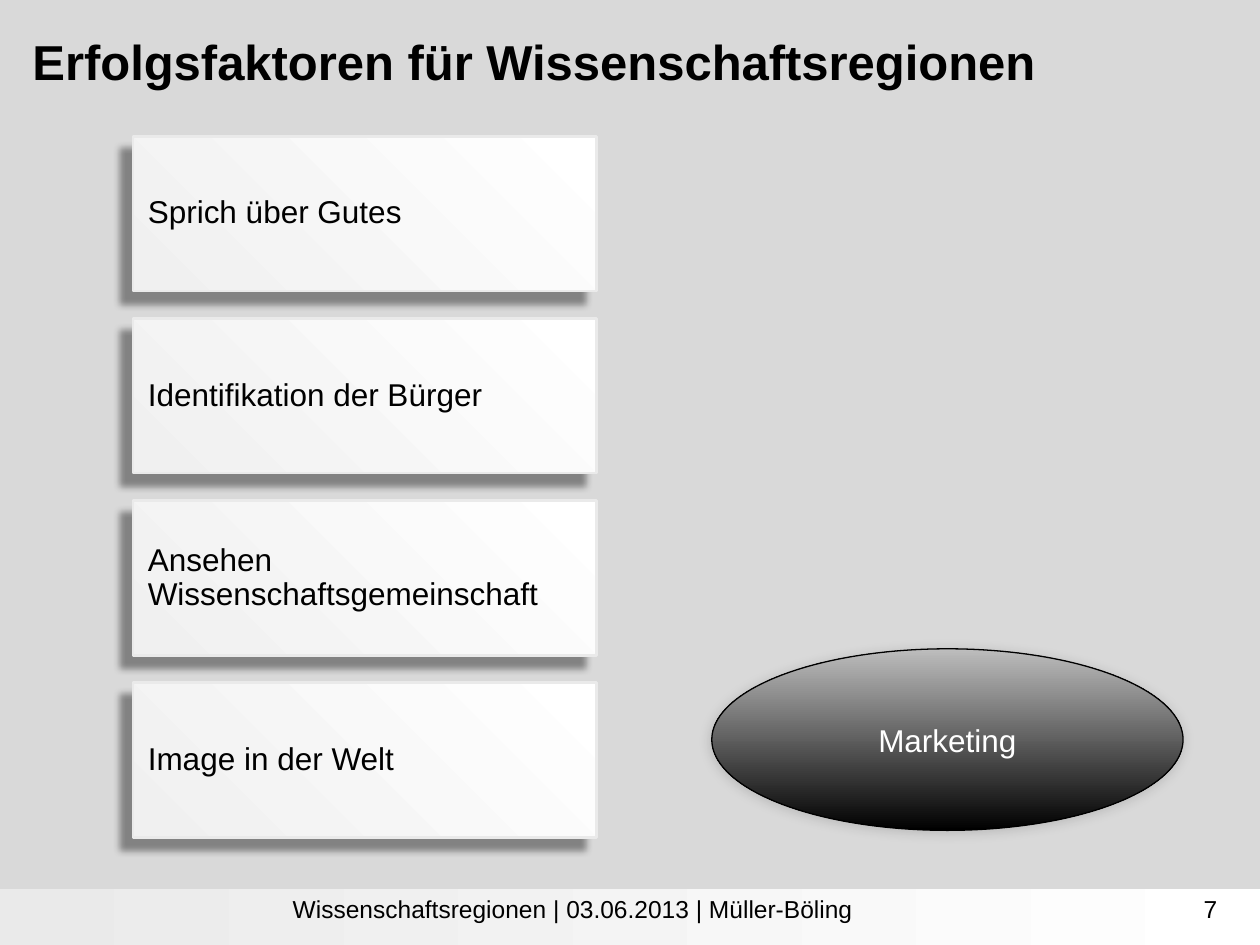
from dataclasses import dataclass

from lxml import etree
from pptx import Presentation
from pptx import util as u
from pptx.dml.color import RGBColor
from pptx.enum import shapes, text
from pptx.oxml.ns import qn


@dataclass(frozen=True)
class Theme:
    font: str = "Arial"
    title_size: int = 28
    body_size: int = 18
    footer_size: int = 14
    background: str = "D9D9D9"
    black: str = "000000"
    white: str = "FFFFFF"
    bar_grey: str = "EAEAEA"
    card_grey: str = "F0F0F0"
    ellipse_grey: str = "BDBDBD"


theme = Theme()


def write(shape, content, size, color, align, anchor, bold=False):
    frame = shape.text_frame
    frame.word_wrap = True
    frame.auto_size = text.MSO_AUTO_SIZE.NONE
    frame.vertical_anchor = anchor
    paragraph = frame.paragraphs[0]
    paragraph.alignment = align
    run = paragraph.add_run()
    run.text = content
    run.font.name = theme.font
    run.font.size = u.Pt(size)
    run.font.bold = bold
    run.font.color.rgb = RGBColor.from_string(color)
    return paragraph


def style(shape, start, end, angle, line=None, shadow=None):
    """Set a two-colour gradient, a (colour, width) line and an (opacity, blur, distance) shadow."""
    shape.fill.gradient()
    shape.fill.gradient_angle = angle
    for stop, color in zip(shape.fill.gradient_stops, (start, end)):
        stop.color.rgb = RGBColor.from_string(color)
    if line:
        shape.line.color.rgb = RGBColor.from_string(line[0])
        shape.line.width = u.Pt(line[1])
    else:
        shape.line.fill.background()
    shape.shadow.inherit = False
    if shadow:
        opacity, blur, distance = shadow
        effects = shape._element.spPr.find(qn("a:effectLst"))
        outer = etree.SubElement(effects, qn("a:outerShdw"), blurRad=str(u.Pt(blur)),
                                 dist=str(u.Pt(distance)), dir=str(135 * 60000),
                                 algn="ctr", rotWithShape="0")
        color = etree.SubElement(outer, qn("a:srgbClr"), val=theme.black)
        etree.SubElement(color, qn("a:alpha"), val=str(opacity * 1000))


presentation = Presentation()
presentation.slide_width = u.Cm(25.4)
presentation.slide_height = u.Cm(19.05)
slide = presentation.slides.add_slide(presentation.slide_layouts[5])
slide.background.fill.solid()
slide.background.fill.fore_color.rgb = RGBColor.from_string(theme.background)

# Footer
bar = slide.shapes.add_shape(shapes.MSO_SHAPE.RECTANGLE,
                             0, u.Cm(17.92), u.Cm(25.4), u.Cm(1.13))
style(bar, theme.white, theme.bar_grey, 180)

footers = [
    ("Wissenschaftsregionen | 03.06.2013 | Müller-Böling", 0.4, 22.3, text.PP_ALIGN.CENTER),
    ("7", 18.87, 5.92, text.PP_ALIGN.RIGHT),
]
for content, left, width, align in footers:
    box = slide.shapes.add_textbox(u.Cm(left), u.Cm(17.9), u.Cm(width), u.Cm(1.32))
    write(box, content, theme.footer_size, theme.black, align, text.MSO_ANCHOR.TOP)

# Title
title = slide.shapes.title
title.left, title.top, title.width, title.height = u.Cm(0.4), u.Cm(0.4), u.Cm(24.43), u.Cm(1.78)
title.text_frame.margin_top = u.Cm(0.23)
write(title, "Erfolgsfaktoren für Wissenschaftsregionen", theme.title_size, theme.black,
      text.PP_ALIGN.LEFT, text.MSO_ANCHOR.TOP, bold=True)

# Topic ellipse
ellipse = slide.shapes.add_shape(shapes.MSO_SHAPE.OVAL,
                                 u.Cm(14.35), u.Cm(13.08), u.Cm(9.5), u.Cm(3.66))
style(ellipse, theme.black, theme.ellipse_grey, 90, (theme.black, 0.75), (15, 7, 1))
write(ellipse, "Marketing", theme.body_size, theme.white,
      text.PP_ALIGN.CENTER, text.MSO_ANCHOR.MIDDLE)

# Success factor cards
factors = [
    "Sprich über Gutes",
    "Identifikation der Bürger",
    "Ansehen Wissenschaftsgemeinschaft",
    "Image in der Welt",
]
for index, factor in enumerate(factors):
    card = slide.shapes.add_shape(shapes.MSO_SHAPE.RECTANGLE, u.Cm(2.68),
                                  u.Cm(2.75 + 3.67 * index), u.Cm(9.35), u.Cm(3.12))
    style(card, theme.card_grey, theme.white, 45, (theme.bar_grey, 1.5), (40, 4, 10))
    frame = card.text_frame
    frame.margin_left = u.Cm(0.3)
    frame.margin_top = frame.margin_right = frame.margin_bottom = u.Cm(0.1)
    paragraph = write(card, factor, theme.body_size, theme.black,
                      text.PP_ALIGN.LEFT, text.MSO_ANCHOR.MIDDLE)
    paragraph.line_spacing = 0.9

presentation.save("out.pptx")
